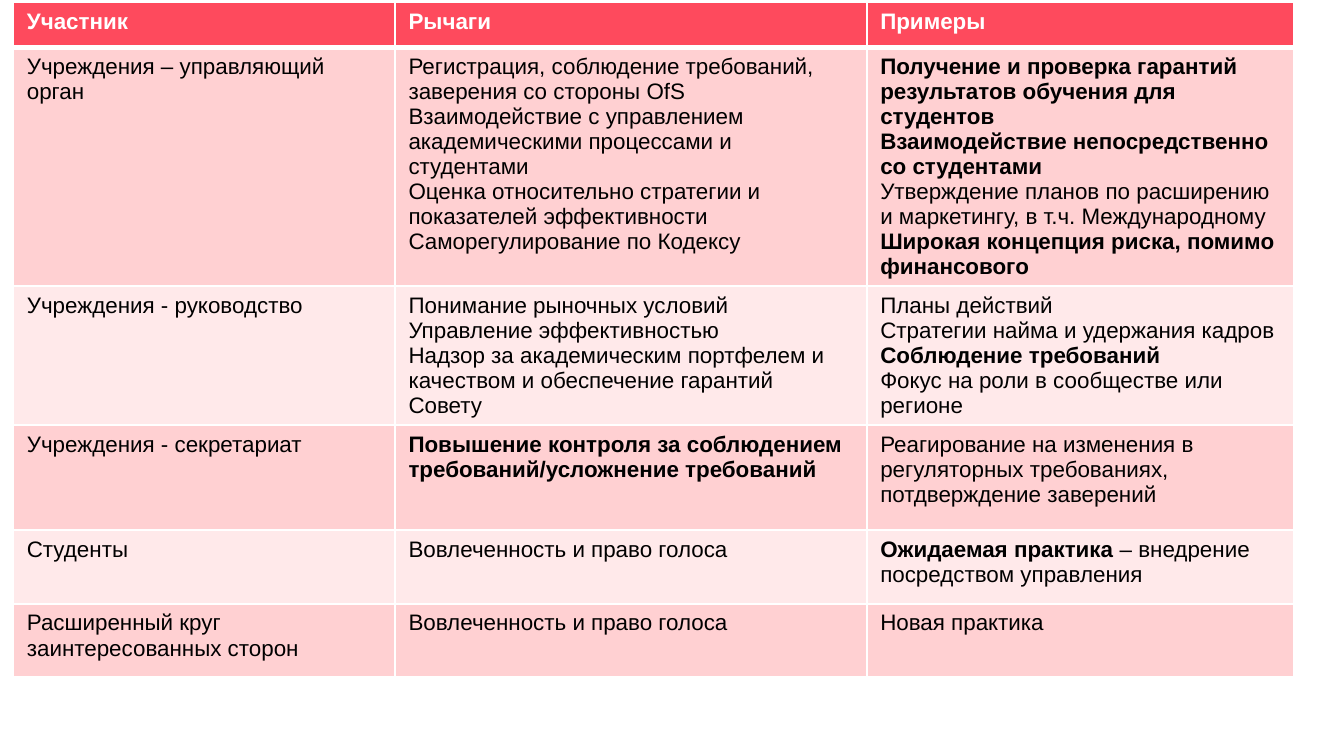
from lxml.etree import SubElement
from pptx import Presentation
from pptx.dml.color import RGBColor as RGB
from pptx.oxml.ns import qn
from pptx.util import Inches, Pt

# Content: each cell is a list of paragraphs, *text* is bold
HEAD = ["Участник", "Рычаги", "Примеры"]
ROWS = [
    (["Учреждения – управляющий орган"],
     ["Регистрация, соблюдение требований, заверения со стороны OfS",
      "Взаимодействие с управлением академическими процессами и студентами",
      "Оценка относительно стратегии и показателей эффективности",
      "Саморегулирование по Кодексу"],
     ["*Получение и проверка гарантий результатов обучения для студентов*",
      "*Взаимодействие непосредственно со студентами*",
      "Утверждение планов по расширению и маркетингу, в т.ч. Международному",
      "*Широкая концепция риска, помимо финансового*"]),
    (["Учреждения - руководство"],
     ["Понимание рыночных условий",
      "Управление эффективностью",
      "Надзор за академическим портфелем и качеством и обеспечение гарантий Совету"],
     ["Планы действий",
      "Стратегии найма и удержания кадров",
      "*Соблюдение требований*",
      "Фокус на роли в сообществе или регионе"]),
    (["Учреждения - секретариат"],
     ["*Повышение контроля за соблюдением требований/усложнение требований*"],
     ["Реагирование на изменения в регуляторных требованиях, потдверждение заверений"]),
    (["Студенты"],
     ["Вовлеченность и право голоса"],
     ["*Ожидаемая практика *– внедрение посредством управления"]),
    (["Расширенный круг заинтересованных сторон"],
     ["Вовлеченность и право голоса"],
     ["Новая практика"]),
]
WIDTHS = [2.84, 3.51, 3.18]
HEIGHTS = [0.33, 1.38, 0.69, 0.78, 0.55, 0.54]  # least heights, rows grow with text

THEME = {
    "font": "Arial", "size": Pt(12),
    "head": "FE4A5D", "bands": ["FFD0D2", "FFE9EA"],
    "light": "FFFFFF", "dark": "000000",
    "line": Pt(1), "rule": Pt(3),
}


def add_border(cell, low):
    """Draw all four edges; low is the width of the bottom one."""
    props = cell._tc.get_or_add_tcPr()
    widths = {"L": THEME["line"], "R": THEME["line"], "T": THEME["line"], "B": low}
    for at, (side, width) in enumerate(widths.items()):
        line = SubElement(props, qn(f"a:ln{side}"), w=str(int(width)))
        fill = SubElement(line, qn("a:solidFill"))
        SubElement(fill, qn("a:srgbClr"), val=THEME["light"])
        props.insert(at, line)


def fill_cell(cell, paras, back, color, low):
    cell.fill.solid()
    cell.fill.fore_color.rgb = RGB.from_string(back)
    add_border(cell, low)
    frame = cell.text_frame
    for i, text in enumerate(paras):
        para = frame.add_paragraph() if i else frame.paragraphs[0]
        para.font.name = THEME["font"]
        para.font.size = THEME["size"]
        para.font.color.rgb = RGB.from_string(color)
        for j, part in enumerate(text.split("*")):
            if part:
                run = para.add_run()
                run.text = part
                run.font.bold = j % 2 == 1


def main():
    # Widescreen page, 16 by 9
    deck = Presentation()
    deck.slide_width = Inches(10)
    deck.slide_height = deck.slide_width * 9 // 16
    slide = deck.slides.add_slide(deck.slide_layouts[6])

    # Table grid
    table = slide.shapes.add_table(
        len(HEIGHTS), len(WIDTHS), Inches(0.1), Inches(0.02),
        Inches(sum(WIDTHS)), Inches(5.2)).table
    for col, width in zip(table.columns, WIDTHS):
        col.width = Inches(width)
    for row, height in zip(table.rows, HEIGHTS):
        row.height = Inches(height)

    # Header row
    for c, text in enumerate(HEAD):
        fill_cell(table.cell(0, c), [f"*{text}*"], THEME["head"],
                  THEME["light"], THEME["rule"])

    # Body rows in alternating bands
    for r, row in enumerate(ROWS):
        for c, paras in enumerate(row):
            fill_cell(table.cell(r + 1, c), paras, THEME["bands"][r % 2],
                      THEME["dark"], THEME["line"])

    deck.save("out.pptx")


if __name__ == "__main__":
    main()
